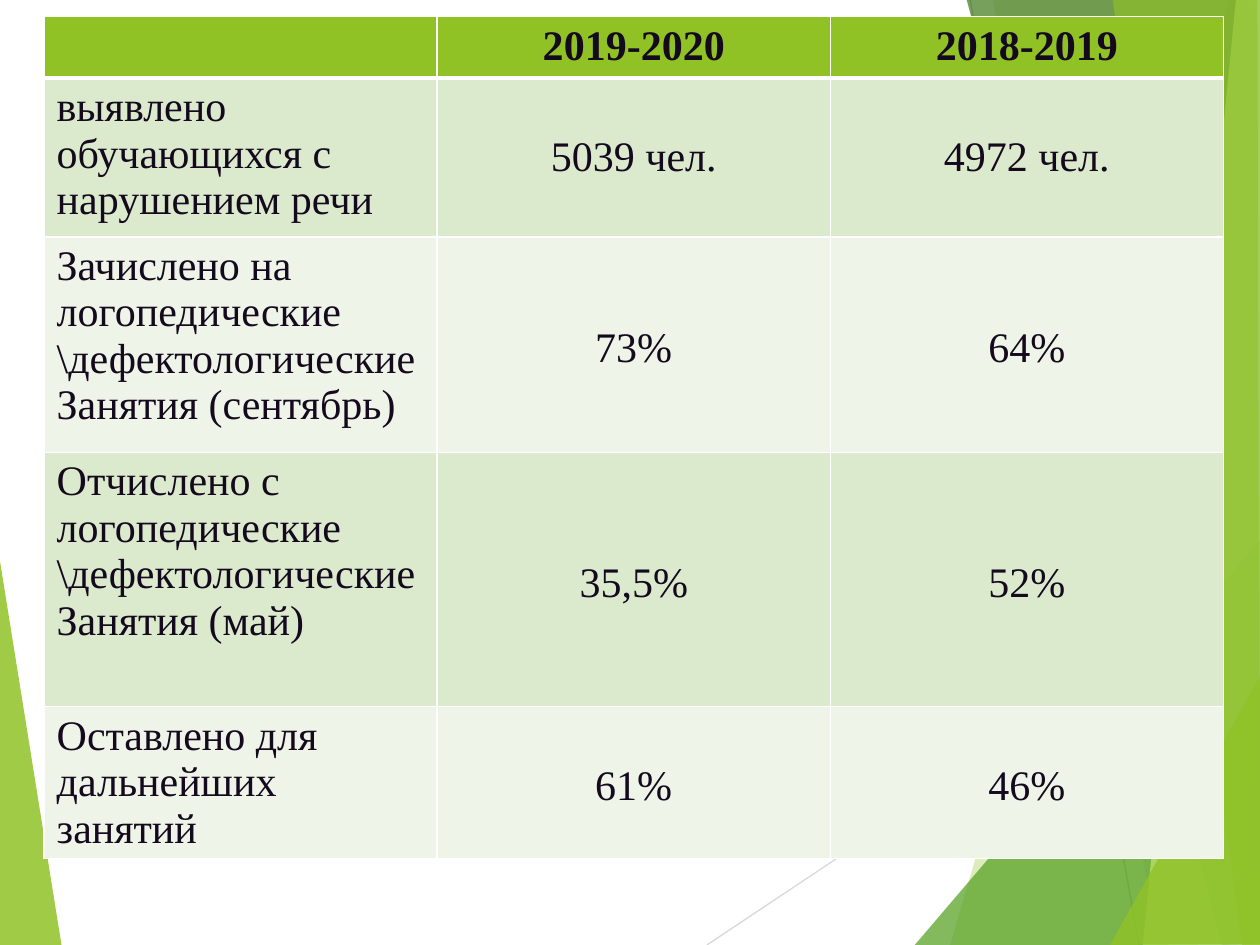
import dataclasses

import lxml.etree
import pptx
import pptx.dml.color
import pptx.enum.shapes
import pptx.enum.text
import pptx.oxml
import pptx.oxml.ns
import pptx.util

Inches = pptx.util.Inches
Pt = pptx.util.Pt
qn = pptx.oxml.ns.qn
SubElement = lxml.etree.SubElement


@dataclasses.dataclass(frozen=True)
class Theme:
    lime: str = "90C226"
    green: str = "54A021"
    forest: str = "3F7819"
    pale_lime: str = "C0E474"
    light_gray: str = "D9D9D9"
    gray: str = "BFBFBF"
    white: str = "FFFFFF"
    ink: str = "14091D"
    bands: tuple = ("DBE9CD", "EEF4E8")
    font: str = "Times New Roman"
    size: int = 24


def rgb(color):
    return pptx.dml.color.RGBColor.from_string(color)


class SlideBuilder:
    """Draws facets, lines and tables on one slide in one theme."""

    def __init__(self, slide, theme):
        self.slide = slide
        self.theme = theme

    def background(self, color):
        fill = self.slide.background.fill
        fill.solid()
        fill.fore_color.rgb = rgb(color)

    def facet(self, points, color, opacity):
        corners = [(Inches(x), Inches(y)) for x, y in points]
        builder = self.slide.shapes.build_freeform(*corners[0])
        builder.add_line_segments(corners[1:], close=True)
        shape = builder.convert_to_shape()
        shape.shadow.inherit = False
        shape.fill.solid()
        shape.fill.fore_color.rgb = rgb(color)
        shape.line.fill.background()
        color_element = shape.fill._xPr.find(qn("a:solidFill")).find(qn("a:srgbClr"))
        SubElement(color_element, qn("a:alpha"), val=str(opacity * 1000))

    def line(self, start, end, color):
        connector = self.slide.shapes.add_connector(
            pptx.enum.shapes.MSO_CONNECTOR.STRAIGHT,
            *(Inches(value) for value in start + end))
        connector.line.color.rgb = rgb(color)
        connector.line.width = Pt(0.75)
        SubElement(connector._element.spPr, qn("a:effectLst"))

    def cell_borders(self, cell, widths):
        properties = cell._tc.get_or_add_tcPr()
        for side, width in widths.items():
            border = SubElement(properties, qn(f"a:ln{side}"), w=str(Pt(width)))
            fill = SubElement(border, qn("a:solidFill"))
            SubElement(fill, qn("a:srgbClr"), val=self.theme.white)

    def fill_cell(self, cell, text, row, column):
        theme = self.theme
        header = row == 0
        self.cell_borders(cell, {"L": 1, "R": 1, "T": 3 if row == 1 else 1,
                                 "B": 3 if header else 1})
        cell.fill.solid()
        cell.fill.fore_color.rgb = rgb(
            theme.lime if header else theme.bands[(row - 1) % 2])
        value = column > 0 and not header
        spaced = value and row > 1
        if value:
            cell.vertical_anchor = pptx.enum.text.MSO_ANCHOR.MIDDLE
        if spaced:
            cell.margin_left = cell.margin_right = Inches(0.07)
            cell.margin_top = cell.margin_bottom = 0
        cell.text = text
        for paragraph in cell.text_frame.paragraphs:
            if column > 0:
                paragraph.alignment = pptx.enum.text.PP_ALIGN.CENTER
            if spaced:
                paragraph.line_spacing = 1.15
            paragraph.font.name = theme.font
            paragraph.font.size = Pt(theme.size)
            paragraph.font.bold = header
            paragraph.font.color.rgb = rgb(theme.ink)

    def table(self, rows, left, top, column_width, row_heights):
        columns = len(rows[0])
        table = self.slide.shapes.add_table(
            len(rows), columns, Inches(left), Inches(top),
            Inches(column_width * columns), Inches(sum(row_heights))).table
        for column in table.columns:
            column.width = Inches(column_width)
        for row, (texts, height) in enumerate(zip(rows, row_heights)):
            table.rows[row].height = Inches(height)
            for column, text in enumerate(texts):
                self.fill_cell(table.cell(row, column), text, row, column)


def main():
    theme = Theme()
    presentation = pptx.Presentation()
    presentation.slide_width = Inches(10)
    presentation.slide_height = Inches(7.5)
    slide = presentation.slides.add_slide(presentation.slide_layouts[6])
    builder = SlideBuilder(slide, theme)
    builder.background(theme.white)

    builder.facet([(-0.01, 4.39), (0.49, 7.51), (-0.01, 7.5)], theme.lime, 85)
    builder.line((5.61, 7.5), (10.01, 4.57), theme.light_gray)
    builder.line((7.7, 0), (9.04, 7.5), theme.gray)
    right_facets = [
        ([(9.75, 0), (7.54, 7.5), (10.02, 7.51), (10.01, 0.01)], theme.lime, 30),
        ([(7.88, -0.01), (9.19, 7.5), (10.01, 7.5), (10.01, -0.01)], theme.lime, 20),
        ([(7.26, 7.5), (10, 4.29), (10.01, 7.5)], theme.green, 72),
        ([(7.67, -0.01), (9.7, 7.5), (10.01, 7.49), (10.01, -0.01)], theme.forest, 70),
        ([(9.81, -0.01), (9.07, 7.5), (10.01, 7.5), (10, -0.01)], theme.pale_lime, 70),
        ([(8.83, -0.01), (9.86, 7.5), (10, 7.5), (9.98, -0.01)], theme.lime, 65),
        ([(8.81, 7.5), (10.01, 5.35), (10.01, 7.49)], theme.lime, 80),
    ]
    for points, color, opacity in right_facets:
        builder.facet(points, color, opacity)

    rows = [
        ("", "2019-2020", "2018-2019"),
        ("выявлено обучающихся с нарушением речи", "5039 чел.", "4972 чел."),
        ("Зачислено на логопедические \\дефектологические\nЗанятия (сентябрь)",
         "73%", "64%"),
        ("Отчислено с логопедические \\дефектологические\nЗанятия (май)",
         "35,5%", "52%"),
        ("Оставлено для дальнейших занятий", "61%", "46%"),
    ]
    builder.table(rows, left=0.35, top=0.13, column_width=3.12,
                  row_heights=[0.49, 1.26, 1.71, 2.02, 0.88])
    presentation.save("out.pptx")


if __name__ == "__main__":
    main()
